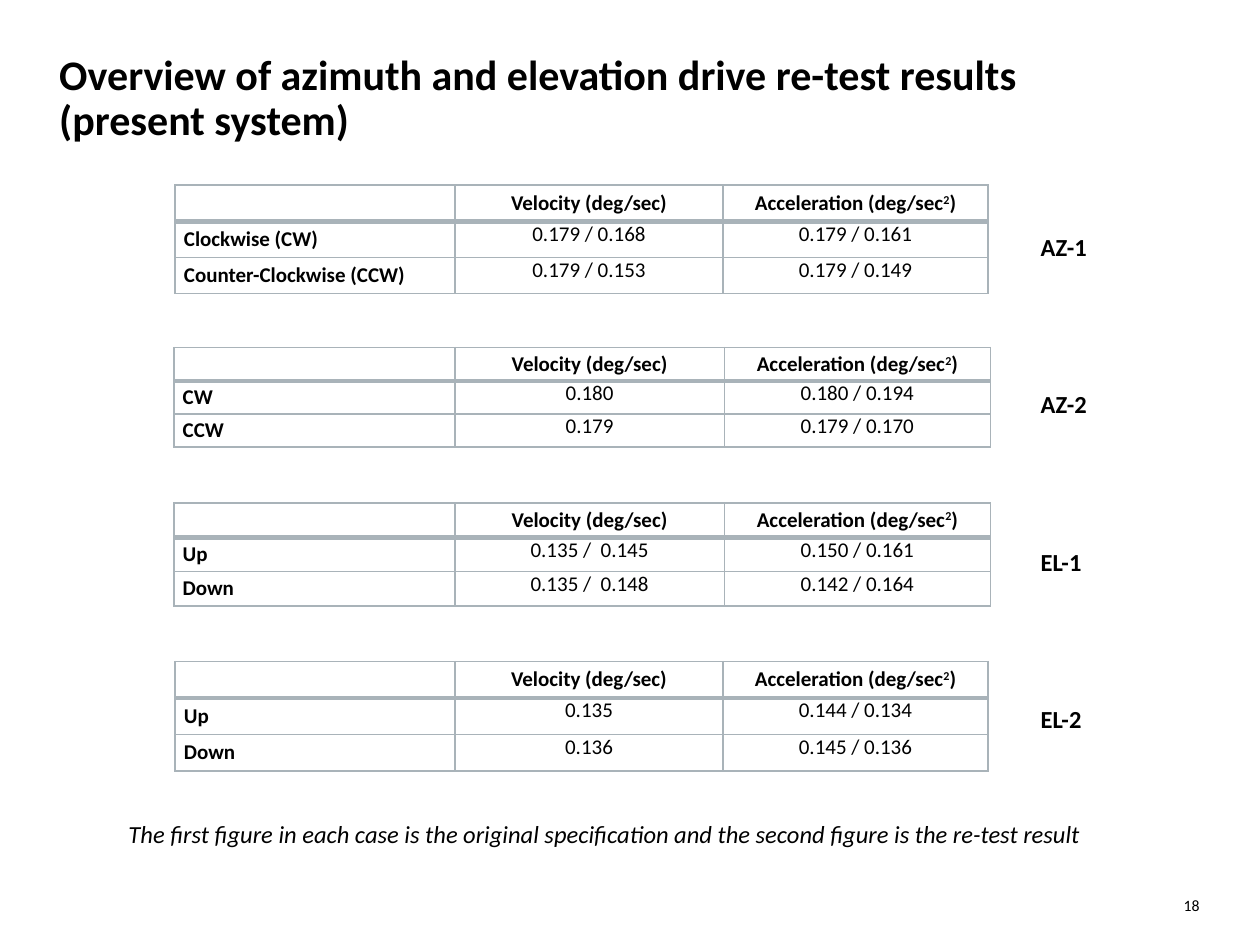
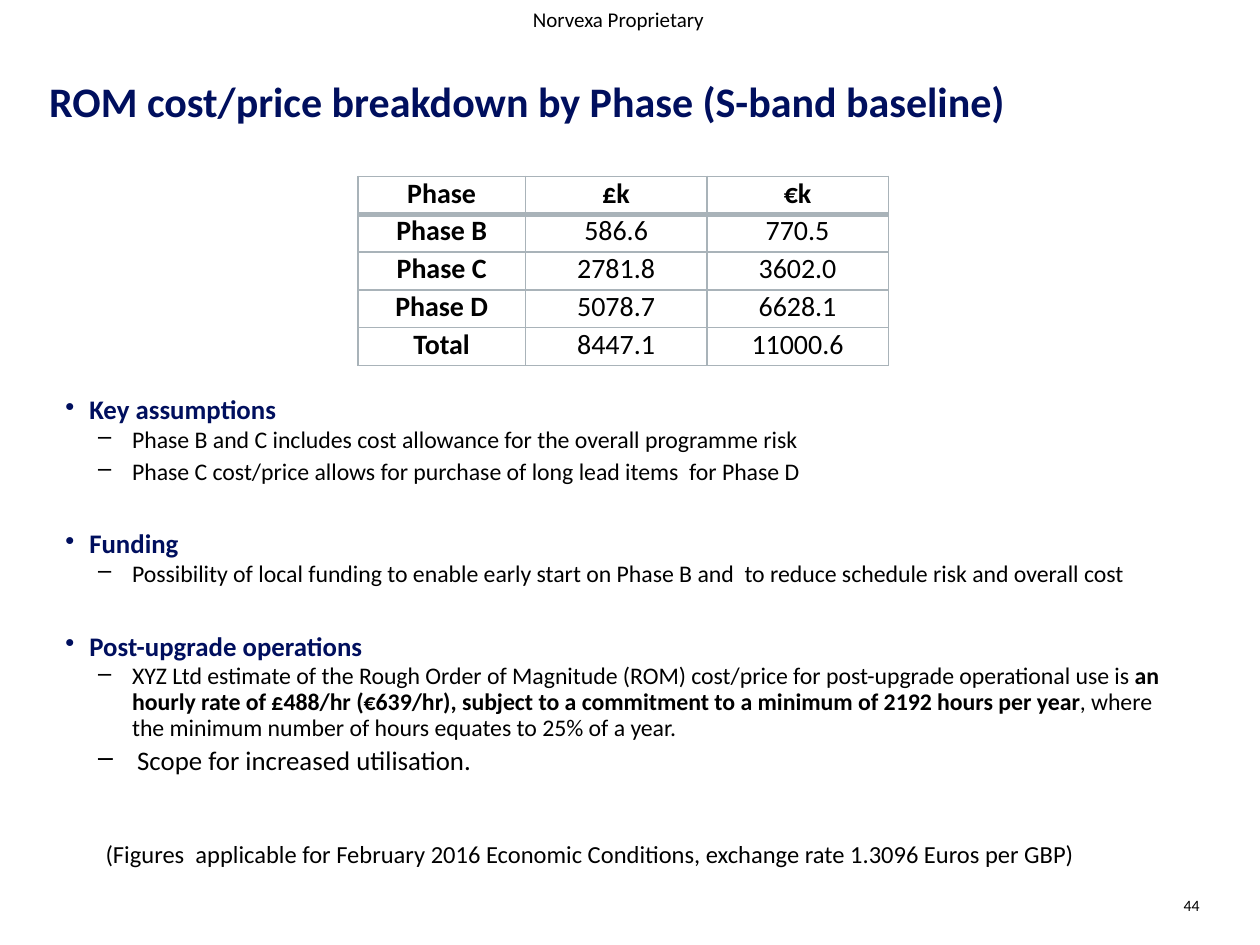
from dataclasses import dataclass

from lxml import etree
from pptx import Presentation
from pptx import util as u
from pptx.dml.color import RGBColor
from pptx.enum import text
from pptx.oxml.ns import qn


@dataclass(frozen=True)
class Theme:
    font: str = "Calibri"
    ink: str = "000000"
    navy: str = "000F5E"
    rule: str = "A9B3B9"
    title: float = 24
    cost: float = 16
    heading: float = 15.3
    point: float = 13.6
    note: float = 14
    cell: float = 12
    page: float = 9


THEME = Theme()
LEFT, CENTER, RIGHT = text.PP_ALIGN.LEFT, text.PP_ALIGN.CENTER, text.PP_ALIGN.RIGHT
TOP, MIDDLE = text.MSO_ANCHOR.TOP, text.MSO_ANCHOR.MIDDLE

DRIVE_TITLE = "Overview of azimuth and elevation drive re-test results\v(present system)"
DRIVE_HEADER = ["", "Velocity (deg/sec)",
                [("Acceleration (deg/sec", {}), ("2", {"raised": True}), (")", {})]]
NARROW = (1.39, [2.22, 2.13, 2.1])
WIDE = (1.38, [2.23, 2.14, 2.11])
DRIVES = [
    ("AZ-1", NARROW, 1.47, 0.86, [
        ["Clockwise (CW)", "0.179 / 0.168", "0.179 / 0.161"],
        ["Counter-Clockwise (CCW)", "0.179 / 0.153", "0.179 / 0.149"]]),
    ("AZ-2", WIDE, 2.76, 0.79, [
        ["CW", "0.180", "0.180 / 0.194"],
        ["CCW", "0.179", "0.179 / 0.170"]]),
    ("EL-1", WIDE, 3.99, 0.82, [
        ["Up", "0.135 /  0.145", "0.150 / 0.161"],
        ["Down", "0.135 /  0.148", "0.142 / 0.164"]]),
    ("EL-2", NARROW, 5.25, 0.87, [
        ["Up", "0.135", "0.144 / 0.134"],
        ["Down", "0.136", "0.145 / 0.136"]]),
]
FIRST_LABEL_TOP, LABEL_STEP = 1.63, 1.25
DRIVE_NOTE = ("The first figure in each case is the original specification "
              "and the second figure is the re-test result")

COST_TITLE = "ROM cost/price breakdown by Phase (S-band baseline)"
COSTS = [
    ["Phase", "£k", "€k"],
    ["Phase B", "586.6", "770.5"],
    ["Phase C", "2781.8", "3602.0"],
    ["Phase D", "5078.7", "6628.1"],
    ["Total", "8447.1", "11000.6"],
]
OUTLINE = [
    ("heading", "Key assumptions"),
    ("point", "Phase B and C includes cost allowance for the overall programme risk"),
    ("point", "Phase C cost/price allows for purchase of long lead items  for Phase D"),
    ("heading", "Funding"),
    ("point", "Possibility of local funding to enable early start on Phase B and  "
              "to reduce schedule risk and overall cost"),
    ("heading", "Post-upgrade operations"),
    ("point", [
        ("XYZ Ltd estimate of the Rough Order of Magnitude (ROM) cost/price "
         "for post-upgrade operational use is ", {}),
        ("an hourly rate of £488/hr (€639/hr), subject to a commitment "
         "to a minimum of 2192 hours per year", {"bold": True}),
        (", where the minimum number of hours equates to 25% of a year.", {})]),
    ("closing", "Scope for increased utilisation."),
]
OUTLINE_STYLES = {
    "heading": dict(size=THEME.heading, color=THEME.navy, bold=True,
                    bullet="•", indent=(0.19, -0.19), before=24),
    "point": dict(size=THEME.point, bullet="–", indent=(0.53, -0.27), before=1.3, after=2),
    "closing": dict(size=THEME.heading, bullet="–", indent=(0.57, -0.31), before=1.3, after=2),
}
COST_NOTE = ("(Figures  applicable for February 2016 Economic Conditions, "
             "exchange rate 1.3096 Euros per GBP)")
MARKING = "Norvexa Proprietary"


def write(frame, content, *, size, color=THEME.ink, bold=False, italic=False, align=LEFT,
          spacing=None, before=None, after=None, bullet=None, indent=None):
    paragraph = frame.paragraphs[0]
    opening = not paragraph.runs
    if not opening:
        paragraph = frame.add_paragraph()
    paragraph.alignment = align
    if spacing:
        paragraph.line_spacing = spacing
    if before and not opening:
        paragraph.space_before = u.Pt(before)
    if after:
        paragraph.space_after = u.Pt(after)
    if bullet:
        properties = paragraph._p.get_or_add_pPr()
        properties.set("marL", str(u.Inches(indent[0])))
        properties.set("indent", str(u.Inches(indent[1])))
        etree.SubElement(properties, qn("a:buChar"), char=bullet)
    if not content:
        paragraph._p.get_or_add_endParaRPr().set("sz", str(int(size * 100)))
        return
    pieces = [(content, {})] if isinstance(content, str) else content
    for words, changes in pieces:
        for number, line in enumerate(words.split("\v")):
            if number:
                paragraph.add_line_break()
            run = paragraph.add_run()
            run.text = line
            run.font.name = THEME.font
            run.font.size = u.Pt(size)
            run.font.bold = changes.get("bold", bold)
            run.font.italic = italic
            run.font.color.rgb = RGBColor.from_string(color)
            if changes.get("raised"):
                run._r.get_or_add_rPr().set("baseline", "30000")


def set_frame(frame, insets, anchor=TOP, wrap=True):
    frame.auto_size = text.MSO_AUTO_SIZE.NONE
    frame.word_wrap = wrap
    frame.vertical_anchor = anchor
    (frame.margin_left, frame.margin_top,
     frame.margin_right, frame.margin_bottom) = map(u.Inches, insets)


def add_text(slide, place, content, insets=(0.1, 0.05, 0.1, 0.05), wrap=True, **style):
    frame = slide.shapes.add_textbox(*map(u.Inches, place)).text_frame
    set_frame(frame, insets, wrap=wrap)
    write(frame, content, **style)
    return frame


def add_page(deck, title, place, color, number):
    slide = deck.slides.add_slide(deck.slide_layouts[5])
    heading = slide.shapes.title
    heading.left, heading.top, heading.width, heading.height = map(u.Inches, place)
    set_frame(heading.text_frame, (0, 0, 0, 0))
    write(heading.text_frame, title, size=THEME.title, color=color, bold=True,
          spacing=u.Pt(26))
    add_text(slide, (8.93, 7.11, 0.59, 0.24), number, insets=(0, 0, 0, 0),
             size=THEME.page, align=RIGHT, spacing=u.Pt(11))
    return slide


def rule_cell(cell, widths):
    properties = cell._tc.get_or_add_tcPr()
    for position, (side, width) in enumerate(widths.items()):
        line = etree.Element(qn(f"a:ln{side}"), w=str(u.Pt(width)))
        fill = etree.SubElement(line, qn("a:solidFill"))
        etree.SubElement(fill, qn("a:srgbClr"), val=THEME.rule)
        properties.insert(position, line)


def add_grid(slide, left, top, widths, height, rows, size, label_align, centred_labels):
    grid = slide.shapes.add_table(
        len(rows), len(widths), u.Inches(left), u.Inches(top),
        u.Inches(sum(widths)), u.Inches(height)).table
    grid.first_row = grid.horz_banding = False
    for column, width in zip(grid.columns, widths):
        column.width = u.Inches(width)
    for r, values in enumerate(rows):
        grid.rows[r].height = u.Inches(height / len(rows))
        for c, value in enumerate(values):
            cell = grid.cell(r, c)
            label = r == 0 or c == 0
            cell.margin_left = cell.margin_right = u.Inches(0.07)
            cell.margin_top = cell.margin_bottom = 0
            cell.vertical_anchor = MIDDLE if label and centred_labels else TOP
            cell.fill.background()
            rule_cell(cell, {"L": 1, "R": 1, "T": 3 if r == 1 else 1, "B": 3 if r == 0 else 1})
            write(cell.text_frame, value, size=size, bold=label,
                  align=label_align if c == 0 else CENTER)


def build_drive_results(deck):
    slide = add_page(deck, DRIVE_TITLE, (0.47, 0.42, 8.87, 0.84), THEME.ink, "18")
    for i, (drive, (left, widths), top, height, results) in enumerate(DRIVES):
        add_grid(slide, left, top, widths, height, [DRIVE_HEADER, *results],
                 THEME.cell, LEFT, True)
        add_text(slide, (8.26, FIRST_LABEL_TOP + i * LABEL_STEP, 1.08, 0.64), drive,
                 insets=(0, 0.21, 0.63, 0), size=THEME.note, bold=True)
    add_text(slide, (0.39, 6.45, 8.82, 0.34), DRIVE_NOTE,
             size=THEME.note, italic=True, align=CENTER)


def build_cost_breakdown(deck):
    slide = add_page(deck, COST_TITLE, (0.39, 0.64, 7.85, 0.84), THEME.navy, "44")
    add_grid(slide, 2.84, 1.4, [1.33, 1.44, 1.44], 1.5, COSTS, THEME.cost, CENTER, False)
    outline = slide.shapes.add_textbox(*map(u.Inches, (0.42, 3.1, 9.05, 3.18))).text_frame
    set_frame(outline, (0.1, 0.05, 0.1, 0.05))
    for kind, content in OUTLINE:
        write(outline, content, spacing=0.9, **OUTLINE_STYLES[kind])
    add_text(slide, (0, 6.16, 10, 1.34), COST_NOTE, insets=(0, 0.5, 0.63, 0),
             size=THEME.note, align=CENTER)
    add_text(slide, (4.13, 0, 1.62, 0.3), MARKING, wrap=False, size=THEME.cell)


def main():
    deck = Presentation()
    deck.slide_width, deck.slide_height = u.Inches(10), u.Inches(7.5)
    build_drive_results(deck)
    build_cost_breakdown(deck)
    deck.save("out.pptx")


if __name__ == "__main__":
    main()
